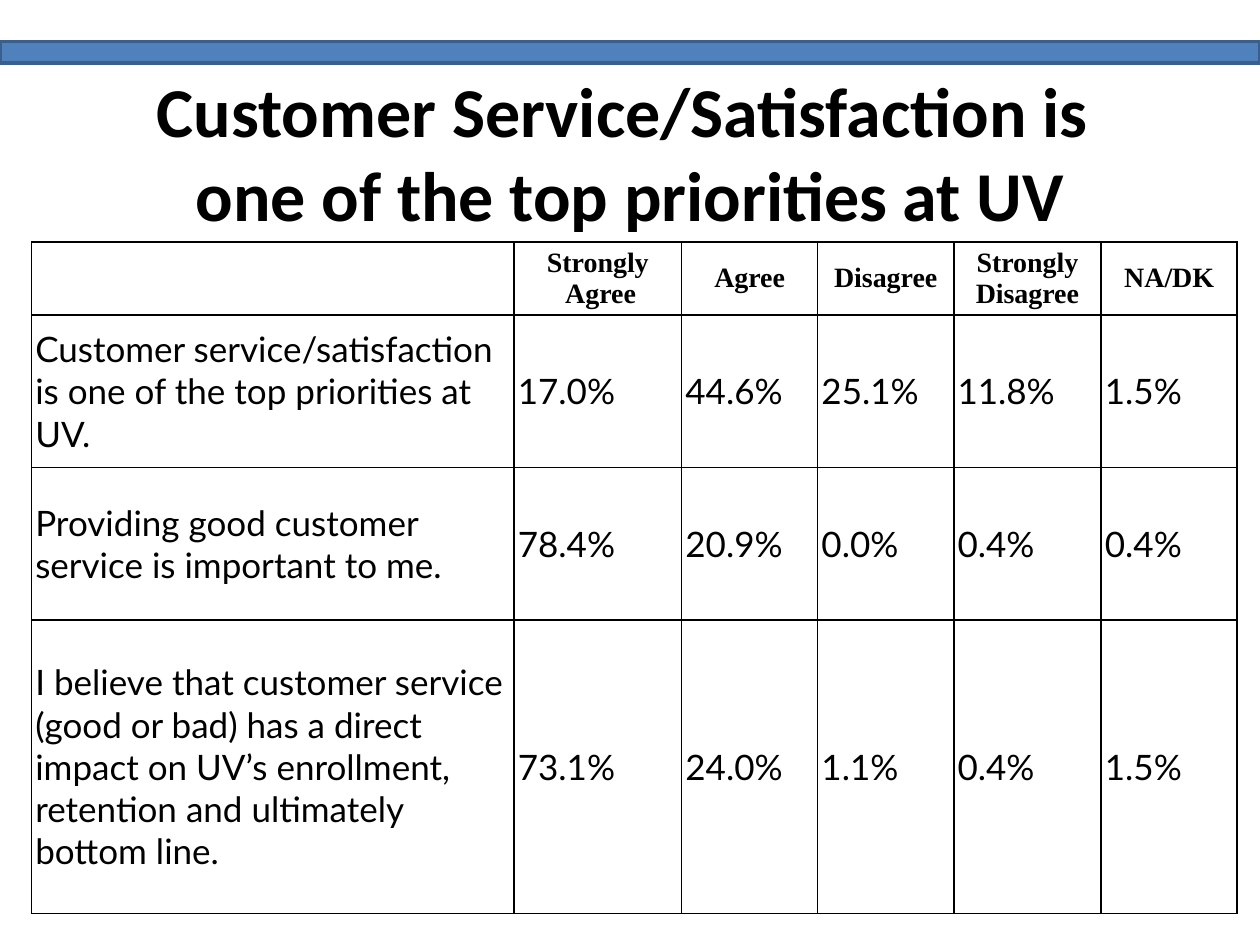
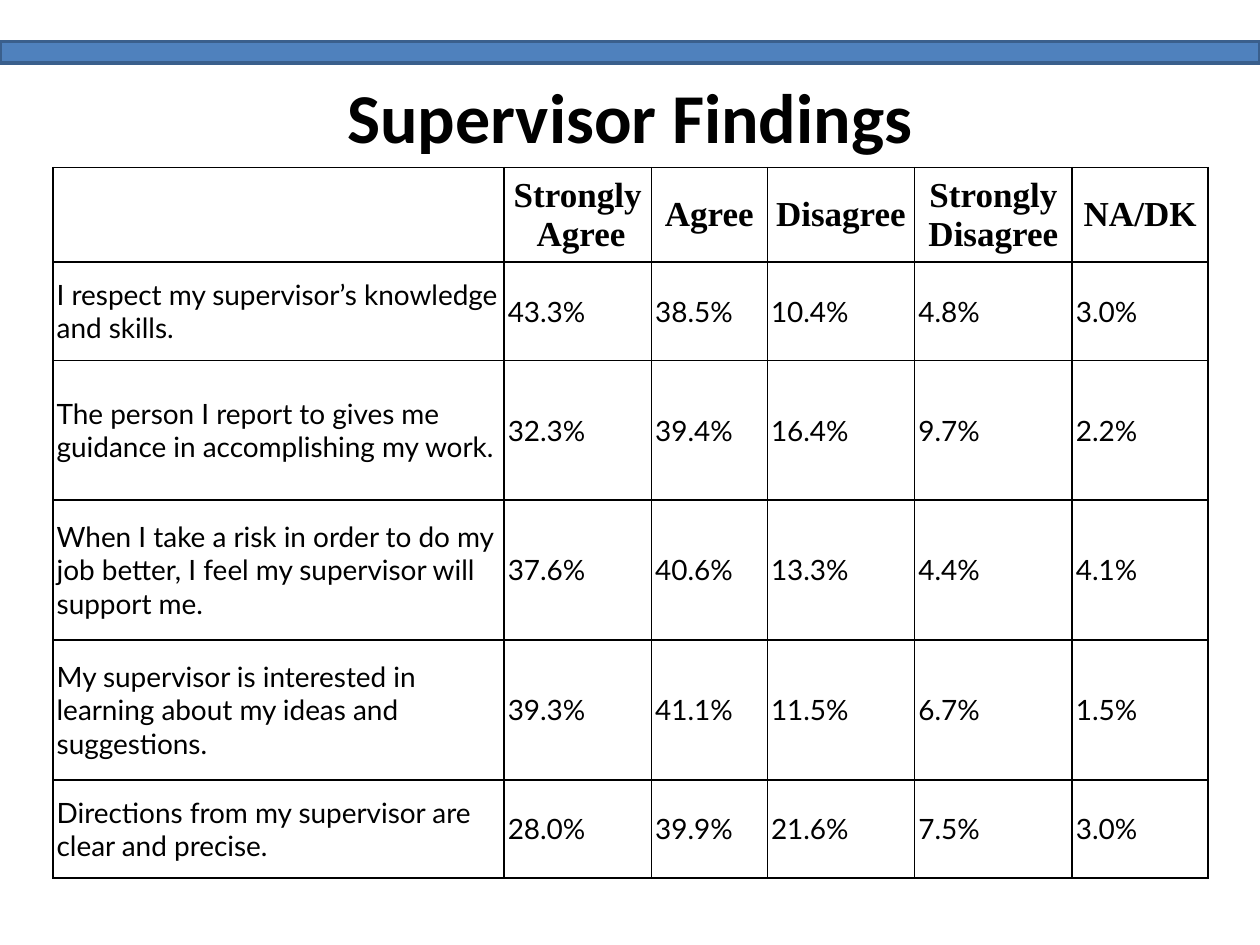
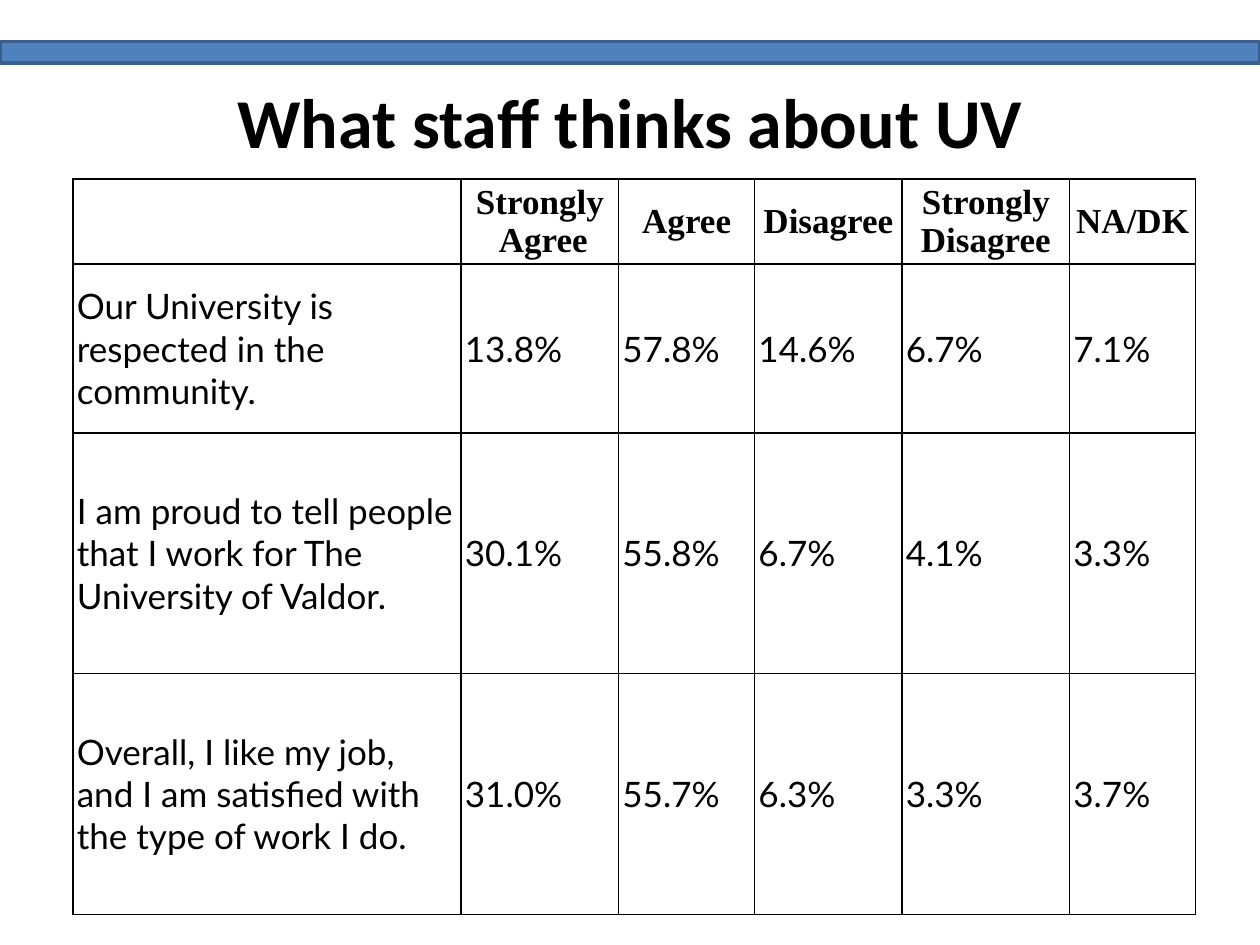
from pptx import Presentation
from pptx.dml.color import RGBColor
from pptx.enum.shapes import MSO_SHAPE
from pptx.enum.text import MSO_ANCHOR, MSO_AUTO_SIZE, PP_ALIGN
from pptx.oxml import parse_xml
from pptx.oxml.ns import nsdecls
from pptx.util import Inches, Pt

COLORS = {"ink": "000000", "band": "4F81BD", "edge": "3A5F8C"}
HEADS = ["", "Strongly\n Agree", "Agree", "Disagree", "Strongly Disagree", "NA/DK"]
INSET = Inches(0.03)

PAGES = [
    {
        "title": "Customer Service/Satisfaction is \vone of the top priorities at UV",
        "box": (0.5, 0.58, 9, 1.25),
        "spot": (0.25, 1.92),
        "cols": [3.83, 1.33, 1.08, 1.08, 1.17, 1.08],
        "rows": [0.58, 1.21, 1.21, 2.33],
        "sizes": (16, 20),
        "data": [
            ("Customer service/satisfaction is one of the top priorities at UV.",
             17.0, 44.6, 25.1, 11.8, 1.5),
            ("Providing good customer service is important to me.",
             78.4, 20.9, 0.0, 0.4, 0.4),
            ("I believe that customer service (good or bad) has a direct impact "
             "on UV’s enrollment, retention and ultimately bottom line.",
             73.1, 24.0, 1.1, 0.4, 1.5),
        ],
    },
    {
        "title": "Supervisor Findings",
        "box": (0.5, 0.5, 9, 0.83),
        "spot": (0.42, 1.33),
        "cols": [3.58, 1.17, 0.92, 1.17, 1.25, 1.08],
        "rows": [0.75, 0.78, 1.11, 1.11, 1.11, 0.78],
        "sizes": (20, 16),
        "data": [
            ("I respect my supervisor’s knowledge and skills.",
             43.3, 38.5, 10.4, 4.8, 3.0),
            ("The person I report to gives me guidance in accomplishing my work.",
             32.3, 39.4, 16.4, 9.7, 2.2),
            ("When I take a risk in order to do my job better, "
             "I feel my supervisor will support me.",
             37.6, 40.6, 13.3, 4.4, 4.1),
            ("My supervisor is interested in learning about my ideas and suggestions.",
             39.3, 41.1, 11.5, 6.7, 1.5),
            ("Directions from my supervisor are clear and precise.",
             28.0, 39.9, 21.6, 7.5, 3.0),
        ],
    },
    {
        "title": "What staff thinks about UV",
        "box": (0.5, 0.33, 9, 1.25),
        "spot": (0.58, 1.42),
        "cols": [3.08, 1.25, 1.08, 1.17, 1.33, 1],
        "rows": [0.67, 1.34, 1.91, 1.91],
        "sizes": (20, 20),
        "data": [
            ("Our University is respected in the community.",
             13.8, 57.8, 14.6, 6.7, 7.1),
            ("I am proud to tell people that I work for The University of Valdor.",
             30.1, 55.8, 6.7, 4.1, 3.3),
            ("Overall, I like my job, and I am satisfied with the type of work I do.",
             31.0, 55.7, 6.3, 3.3, 3.7),
        ],
    },
]


def write(frame, text, size=20, font="Lato", bold=False, align=PP_ALIGN.LEFT):
    frame.text = text
    for para in frame.paragraphs:
        para.alignment = align
        for run in para.runs:
            run.font.size = Pt(size)
            run.font.name = font
            run.font.bold = bold
            run.font.color.rgb = RGBColor.from_string(COLORS["ink"])


def frame_cell(cell):
    """Rule all four sides of a cell, clear its fill and set its insets."""
    props = cell._tc.get_or_add_tcPr()
    for side in "LRTB":
        props.append(parse_xml(
            f'<a:ln{side} {nsdecls("a")} w="{Pt(1)}"><a:solidFill>'
            f'<a:srgbClr val="{COLORS["ink"]}"/></a:solidFill></a:ln{side}>'))
    cell.fill.background()
    cell.vertical_anchor = MSO_ANCHOR.MIDDLE
    cell.margin_left = cell.margin_right = INSET
    cell.margin_top = cell.margin_bottom = INSET


deck = Presentation()
deck.slide_width, deck.slide_height = Inches(10), Inches(7.5)

for page in PAGES:
    slide = deck.slides.add_slide(deck.slide_layouts[5])

    title = slide.shapes.title
    title.left, title.top, title.width, title.height = map(Inches, page["box"])
    title.text_frame.auto_size = MSO_AUTO_SIZE.NONE
    title.text_frame.vertical_anchor = MSO_ANCHOR.MIDDLE
    write(title.text_frame, page["title"], size=40, font="Calibri", bold=True,
          align=PP_ALIGN.CENTER)

    band = slide.shapes.add_shape(
        MSO_SHAPE.RECTANGLE, 0, Inches(0.33), deck.slide_width, Inches(0.17))
    band.shadow.inherit = False
    band.fill.solid()
    band.fill.fore_color.rgb = RGBColor.from_string(COLORS["band"])
    band.line.color.rgb = RGBColor.from_string(COLORS["edge"])
    band.line.width = Pt(2)

    cols, rows = page["cols"], page["rows"]
    left, top = page["spot"]
    table = slide.shapes.add_table(
        len(rows), len(cols), Inches(left), Inches(top),
        Inches(sum(cols)), Inches(sum(rows))).table
    table.first_row = table.horz_banding = False
    for col, width in zip(table.columns, cols):
        col.width = Inches(width)
    for row, height in zip(table.rows, rows):
        row.height = Inches(height)

    head, body = page["sizes"]
    for r, line in enumerate([HEADS, *page["data"]]):
        for c, value in enumerate(line):
            cell = table.cell(r, c)
            frame_cell(cell)
            if r == 0:
                write(cell.text_frame, value, size=head, font="Times New Roman",
                      bold=True, align=PP_ALIGN.CENTER)
            else:
                text = value if c == 0 else f"{value:.1f}%"
                write(cell.text_frame, text, size=body)

deck.save("out.pptx")
